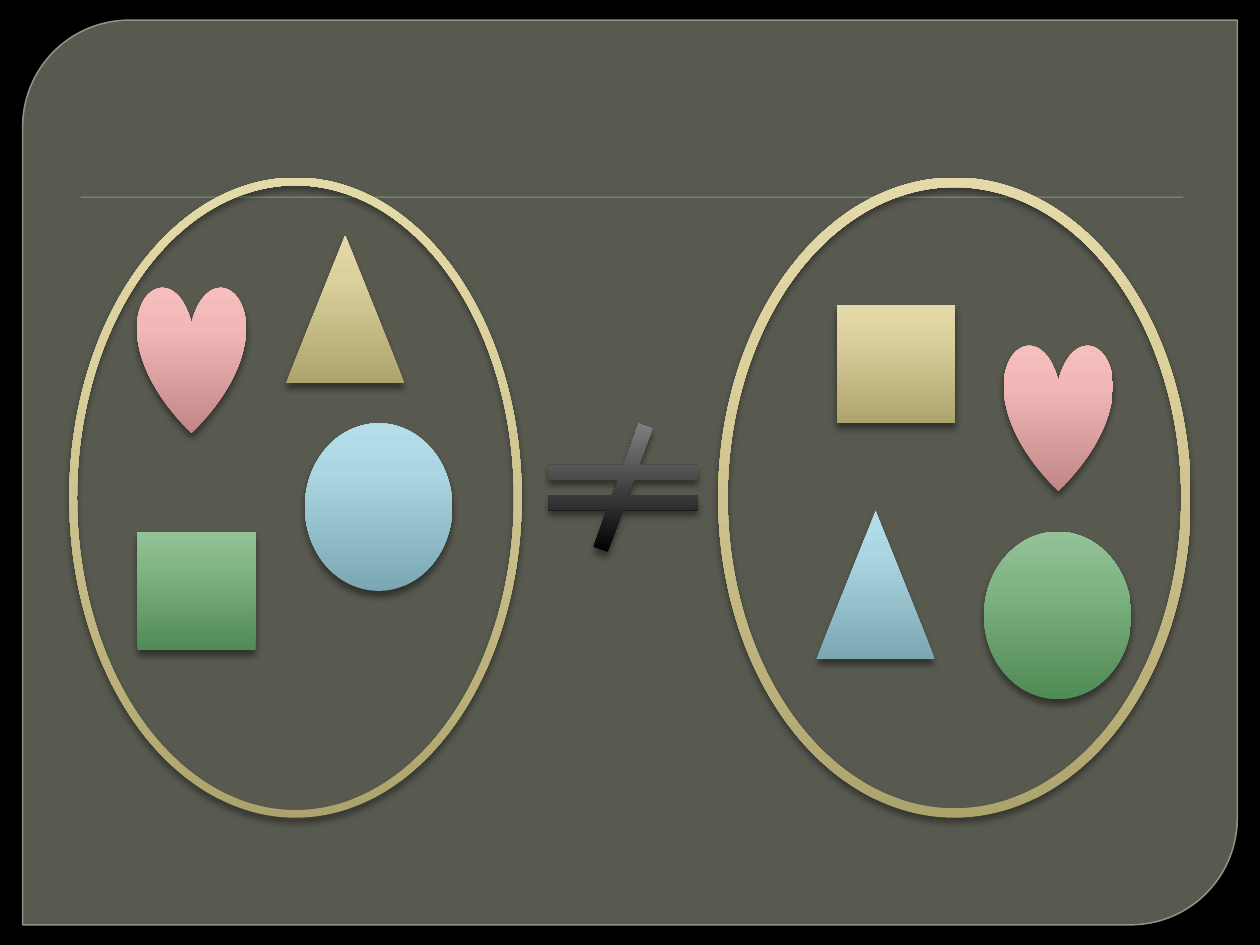
from copy import deepcopy
from dataclasses import dataclass, field
from typing import Any

from lxml import etree
from pptx import Presentation
from pptx import util as u
from pptx.dml import color
from pptx.enum import shapes
from pptx.oxml import ns

Kind = shapes.MSO_SHAPE


@dataclass(frozen=True)
class Shadow:
    alpha: int
    blur: float
    distance: float
    tint: str = "000000"
    direction: int = 90


@dataclass(frozen=True)
class Theme:
    background: str = "000000"
    panel: str = "888B7B"
    panel_alpha: int = 65
    border: str = "9DA090"
    border_alpha: int = 88
    border_width: float = 0.87
    rule: str = "72A376"
    stops: tuple = (0, 0.72, 1)
    gold: tuple = ("ADA36C", "DCD19D", "E4D9A8")
    pink: tuple = ("C18787", "F2B8B8", "F7BEBE")
    green: tuple = ("508A55", "83B687", "94C298")
    blue: tuple = ("7BA7B3", "ACD7E2", "B4DDE9")
    black: tuple = ("000000", "5E5E5E", "7F7F7F")
    rule_shadow: Shadow = field(default_factory=lambda: Shadow(75, 1, 1))
    figure_shadow: Shadow = field(default_factory=lambda: Shadow(43, 4, 3))


@dataclass(frozen=True)
class Figure:
    kind: Any
    left: float
    top: float
    size: tuple
    tones: tuple
    adjustments: tuple = ()


THEME = Theme()
HEART = (0.86, 1.17)
SQUARE = (0.94, 0.94)
CIRCLE = (1.17, 1.33)
TRIANGLE = (0.94, 1.17)

FIGURES = (
    Figure(Kind.DONUT, 0.55, 1.41, (3.59, 5.08), THEME.gold, (0.017,)),
    Figure(Kind.DONUT, 5.7, 1.41, (3.75, 5.08), THEME.gold, (0.02,)),
    Figure(Kind.MATH_NOT_EQUAL, 4.14, 3.36, (1.61, 1.02), THEME.black, (0.117, 66, 0.118)),
    Figure(Kind.HEART, 1.09, 2.27, HEART, THEME.pink),
    Figure(Kind.RECTANGLE, 1.09, 4.22, SQUARE, THEME.green),
    Figure(Kind.OVAL, 2.42, 3.36, CIRCLE, THEME.blue),
    Figure(Kind.ISOSCELES_TRIANGLE, 2.27, 1.87, TRIANGLE, THEME.gold),
    Figure(Kind.HEART, 7.97, 2.73, HEART, THEME.pink),
    Figure(Kind.RECTANGLE, 6.64, 2.42, SQUARE, THEME.gold),
    Figure(Kind.OVAL, 7.81, 4.22, CIRCLE, THEME.green),
    Figure(Kind.ISOSCELES_TRIANGLE, 6.48, 4.06, TRIANGLE, THEME.blue),
)


def rgb(value: str) -> color.RGBColor:
    return color.RGBColor.from_string(value)


def set_attributes(target: Any, values: dict) -> None:
    for name, value in values.items():
        setattr(target, name, value)


def add_alpha(parent: Any, percent: int) -> None:
    tint = next(parent.iter(ns.qn("a:srgbClr")))
    etree.SubElement(tint, ns.qn("a:alpha"), val=str(percent * 1000))


def add_shape(slide: Any, kind: Any, left: float, top: float, size: tuple,
              adjustments: tuple = ()) -> Any:
    shape = slide.shapes.add_shape(kind, *map(u.Inches, (left, top, *size)))
    for index, value in enumerate(adjustments):
        shape.adjustments[index] = value
    shape.line.fill.background()
    shape.shadow.inherit = False
    return shape


def fill_solid(fill: Any, value: str) -> None:
    fill.solid()
    fill.fore_color.rgb = rgb(value)


def fill_gradient(shape: Any, tones: tuple) -> None:
    shape.fill.gradient()
    shape.fill.gradient_angle = 90
    stop_list = next(shape._element.spPr.iter(ns.qn("a:gsLst")))
    stop_list.append(deepcopy(stop_list[-1]))
    for stop, position, tone in zip(shape.fill.gradient_stops, THEME.stops, tones):
        stop.position = position
        stop.color.rgb = rgb(tone)


def cast_shadow(shape: Any, shadow: Shadow) -> None:
    effects = shape._element.spPr.find(ns.qn("a:effectLst"))
    outer = etree.SubElement(
        effects, ns.qn("a:outerShdw"),
        blurRad=str(u.Pt(shadow.blur)), dist=str(u.Pt(shadow.distance)),
        dir=str(shadow.direction * 60000), algn="ctr", rotWithShape="0",
    )
    etree.SubElement(outer, ns.qn("a:srgbClr"), val=shadow.tint)
    add_alpha(outer, shadow.alpha)


def draw_backdrop(slide: Any) -> None:
    fill_solid(slide.background.fill, THEME.background)
    panel = add_shape(slide, Kind.ROUND_2_DIAG_RECTANGLE, 0.18, 0.16, (9.64, 7.18), (0.118, 0))
    fill_solid(panel.fill, THEME.panel)
    add_alpha(panel._element.spPr.find(ns.qn("a:solidFill")), THEME.panel_alpha)
    fill_solid(panel.line.fill, THEME.border)
    panel.line.width = u.Pt(THEME.border_width)
    add_alpha(panel._element.spPr.find(ns.qn("a:ln")), THEME.border_alpha)
    rule = add_shape(slide, Kind.RECTANGLE, 0.64, 1.56, (8.75, 0.01))
    fill_solid(rule.fill, THEME.rule)
    cast_shadow(rule, THEME.rule_shadow)


def draw_figure(slide: Any, figure: Figure) -> None:
    shape = add_shape(slide, figure.kind, figure.left, figure.top, figure.size, figure.adjustments)
    fill_gradient(shape, figure.tones)
    cast_shadow(shape, THEME.figure_shadow)


def main() -> None:
    presentation = Presentation()
    set_attributes(presentation, {"slide_width": u.Inches(10), "slide_height": u.Inches(7.5)})
    slide = presentation.slides.add_slide(presentation.slide_layouts[6])
    draw_backdrop(slide)
    for figure in FIGURES:
        draw_figure(slide, figure)
    presentation.save("out.pptx")


if __name__ == "__main__":
    main()
